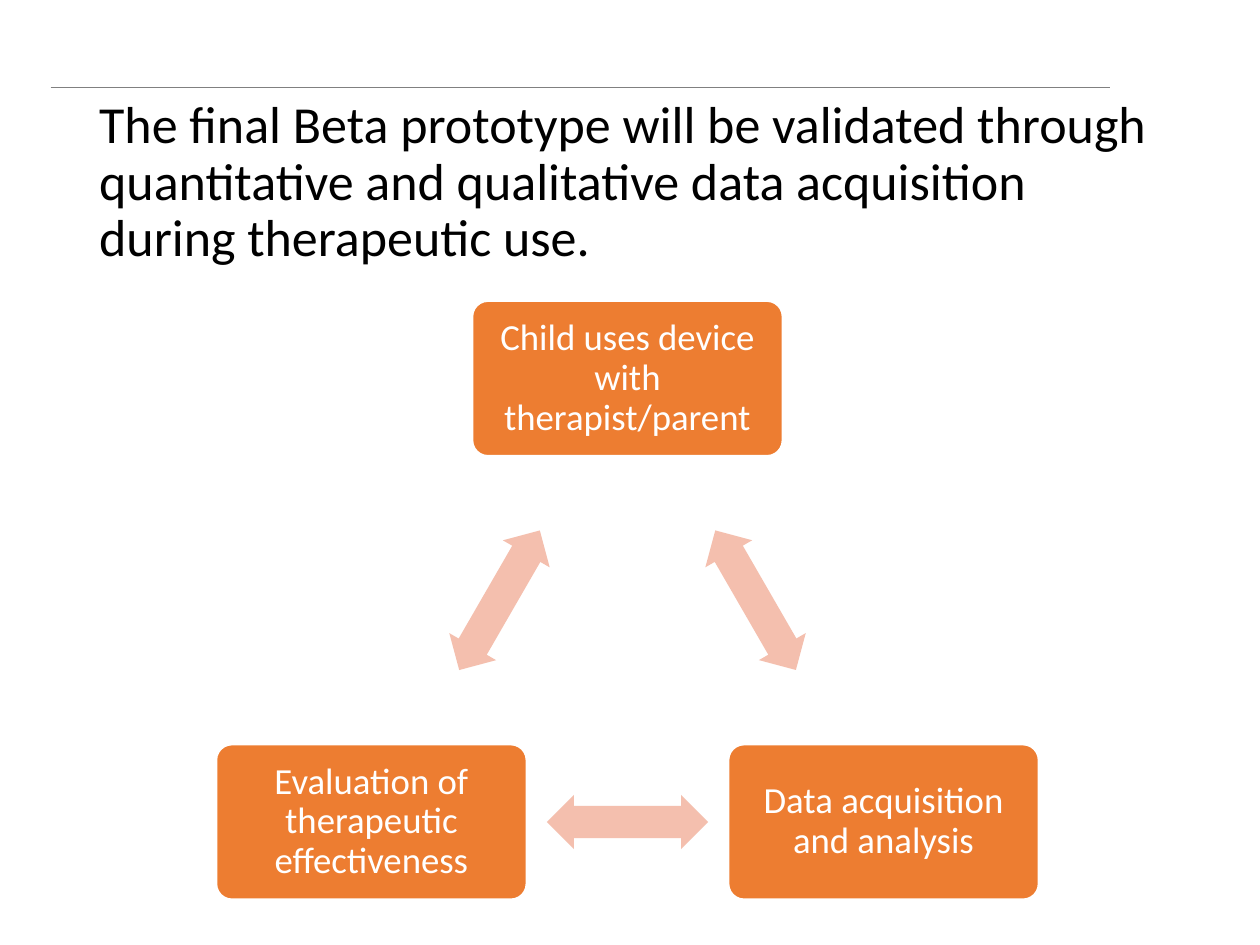
import math
from dataclasses import dataclass

import pptx
import pptx.dml.color
import pptx.enum.shapes
import pptx.enum.text
import pptx.oxml
import pptx.util
from pptx.util import Cm


def rgb(value: str) -> pptx.dml.color.RGBColor:
    return pptx.dml.color.RGBColor.from_string(value)


@dataclass(frozen=True)
class Theme:
    font: str = "Calibri"
    title_size: float = 29.7
    stage_size: float = 21
    title_color: str = "000000"
    stage_text: str = "FFFFFF"
    stage_fill: str = "ED7D31"
    stage_line: str = "FFFFFF"
    arrow_fill: str = "F4BFAE"
    rule: str = "808080"


@dataclass(frozen=True)
class Stage:
    label: str
    angle: float  # degrees clockwise from the top of the cycle


THEME = Theme()
STAGES = [
    Stage("Child uses device with therapist/parent", 0),
    Stage("Data acquisition and analysis", 120),
    Stage("Evaluation of therapeutic effectiveness", 240),
]

# Cycle geometry in centimetres
CENTER_X, CENTER_Y, RADIUS = 12.65, 13.59, 5.96
STAGE_W, STAGE_H = 6.25, 3.12
ARROW_W, ARROW_H = 3.25, 1.09


def cycle_point(angle: float, radius: float) -> tuple[float, float]:
    turn = math.radians(angle)
    return CENTER_X + radius * math.sin(turn), CENTER_Y - radius * math.cos(turn)


def write_text(frame, text: str, size: float, color: str, align) -> None:
    frame.word_wrap = True
    frame.vertical_anchor = pptx.enum.text.MSO_ANCHOR.MIDDLE
    paragraph = frame.paragraphs[0]
    paragraph.alignment = align
    paragraph.line_spacing = 0.9
    run = paragraph.add_run()
    run.text = text
    run.font.name = THEME.font
    run.font.size = pptx.util.Pt(size)
    run.font.color.rgb = rgb(color)


def add_centered(slide, kind, center: tuple[float, float], width: float,
                 height: float, fill: str):
    x, y = center
    shape = slide.shapes.add_shape(
        kind, Cm(x - width / 2), Cm(y - height / 2), Cm(width), Cm(height))
    shape.shadow.inherit = False
    shape.fill.solid()
    shape.fill.fore_color.rgb = rgb(fill)
    return shape


def add_stage(slide, stage: Stage) -> None:
    box = add_centered(slide, pptx.enum.shapes.MSO_SHAPE.ROUNDED_RECTANGLE,
                       cycle_point(stage.angle, RADIUS), STAGE_W, STAGE_H,
                       THEME.stage_fill)
    box.adjustments[0] = 0.1
    box.line.color.rgb = rgb(THEME.stage_line)
    box.line.width = pptx.util.Pt(1)
    frame = box.text_frame
    frame.margin_left = frame.margin_right = Cm(0.25)
    frame.margin_top = frame.margin_bottom = Cm(0.25)
    write_text(frame, stage.label, THEME.stage_size, THEME.stage_text,
               pptx.enum.text.PP_ALIGN.CENTER)


def add_arrow_after(slide, stage: Stage) -> None:
    # The middle of a side of the triangle lies at half the radius
    angle = stage.angle + 60
    arrow = add_centered(slide, pptx.enum.shapes.MSO_SHAPE.LEFT_RIGHT_ARROW,
                         cycle_point(angle, RADIUS / 2), ARROW_W, ARROW_H,
                         THEME.arrow_fill)
    arrow.adjustments[0] = 0.6
    arrow.adjustments[1] = 0.5
    arrow.line.fill.background()
    arrow.rotation = angle


def add_header_rule(slide) -> None:
    rule = slide.shapes.add_connector(
        pptx.enum.shapes.MSO_CONNECTOR.STRAIGHT,
        Cm(1.02), Cm(1.75), Cm(22.38), Cm(1.75))
    rule.line.color.rgb = rgb(THEME.rule)
    rule.line.width = pptx.util.Pt(0.25)
    rule._element.spPr.append(
        pptx.oxml.parse_xml(
            '<a:effectLst xmlns:a='
            '"http://schemas.openxmlformats.org/drawingml/2006/main"/>'))


def main() -> None:
    deck = pptx.Presentation()
    deck.slide_width, deck.slide_height = Cm(25.4), Cm(19.05)
    slide = deck.slides.add_slide(deck.slide_layouts[6])

    # Header
    add_header_rule(slide)
    title = slide.shapes.add_textbox(Cm(1.75), Cm(2.31), Cm(21.9), Cm(2.77))
    write_text(
        title.text_frame,
        "The final Beta prototype will be validated through quantitative and "
        "qualitative data acquisition during therapeutic use.",
        THEME.title_size, THEME.title_color, pptx.enum.text.PP_ALIGN.LEFT)

    # Validation cycle
    for stage in STAGES:
        add_stage(slide, stage)
        add_arrow_after(slide, stage)

    deck.save("out.pptx")


if __name__ == "__main__":
    main()
